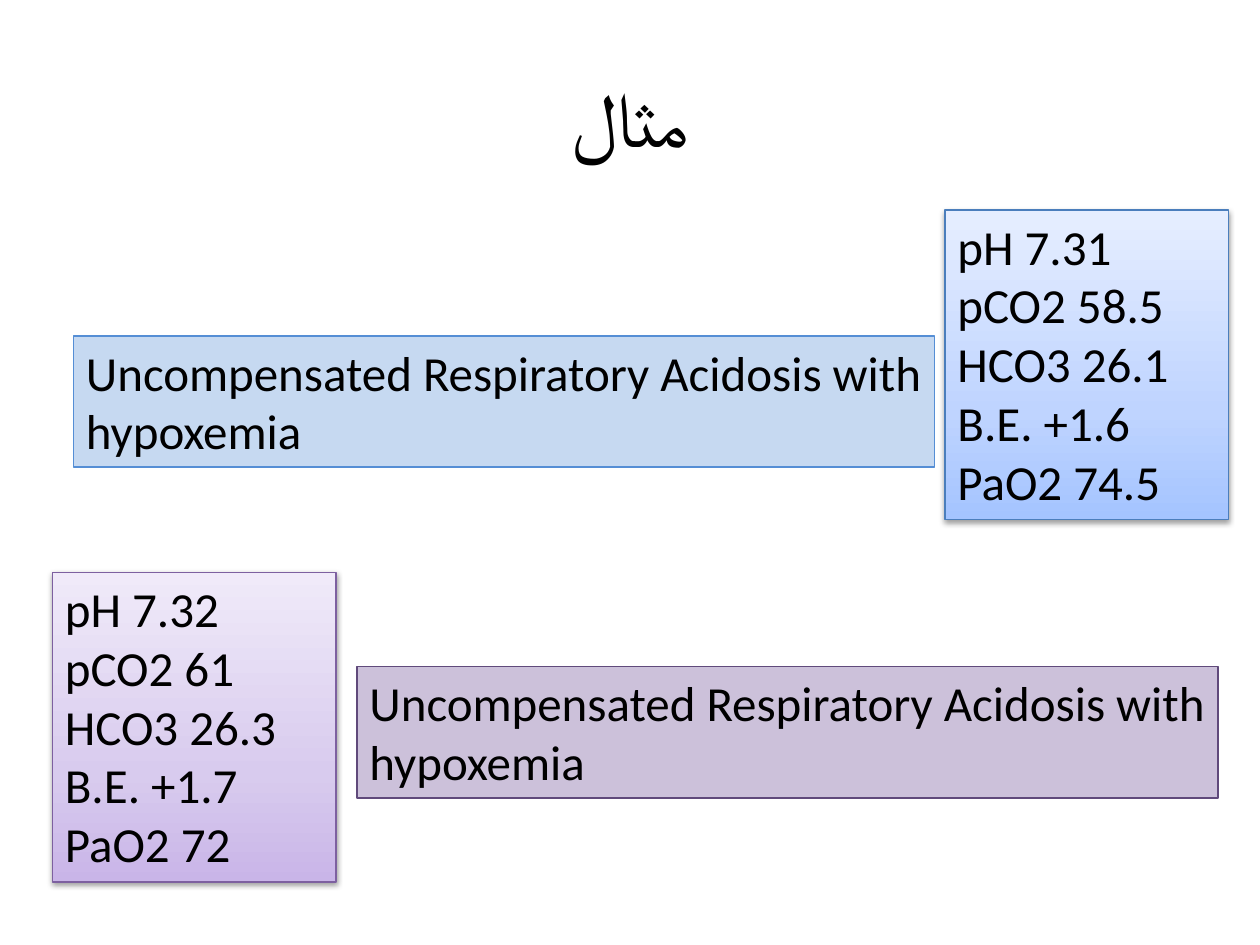
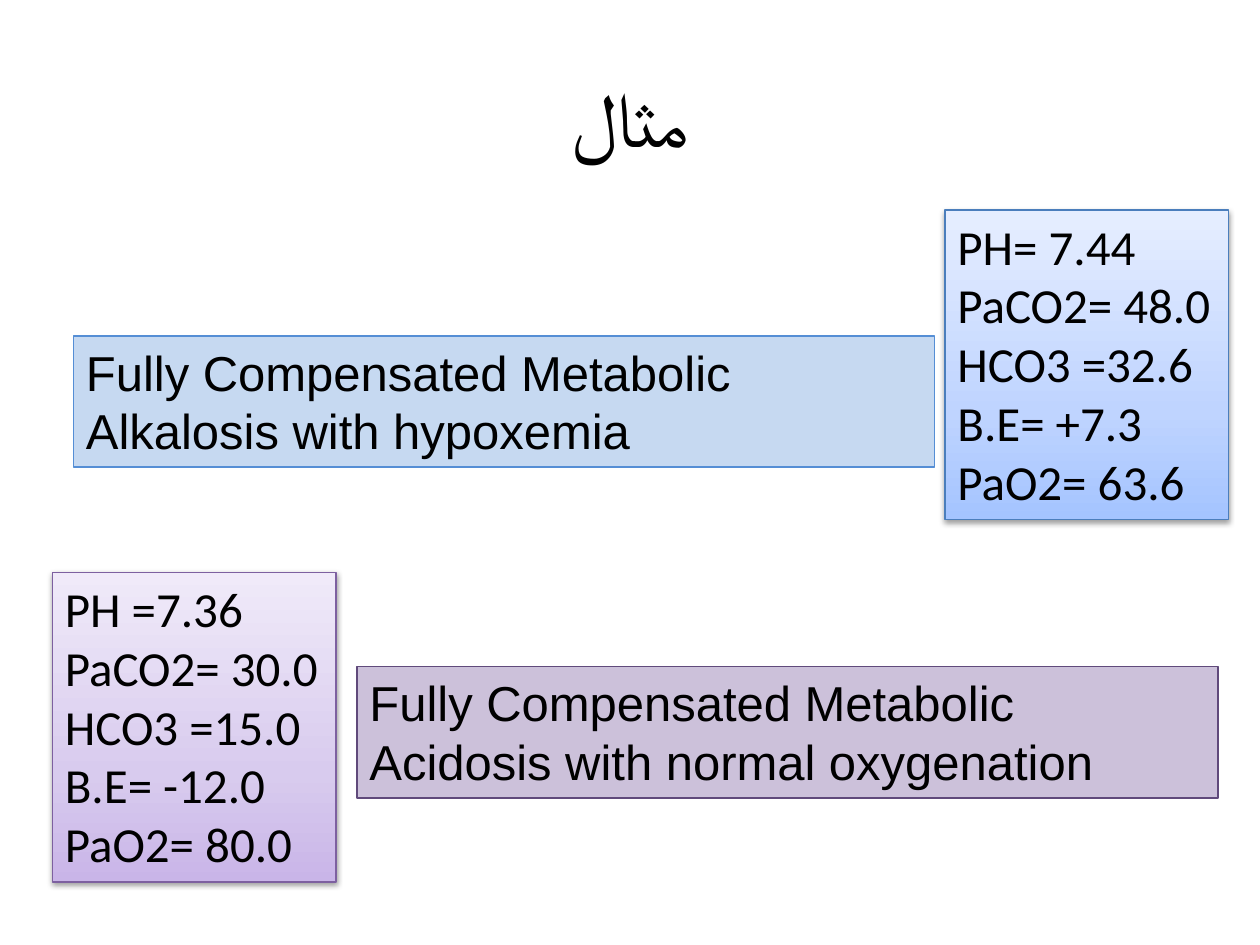
from copy import deepcopy
from dataclasses import dataclass
from typing import Any

from lxml.etree import SubElement
from pptx import Presentation
from pptx.dml.color import RGBColor
from pptx.enum.shapes import MSO_SHAPE
from pptx.enum.text import MSO_ANCHOR, MSO_AUTO_SIZE, PP_ALIGN
from pptx.oxml.ns import qn
from pptx.util import Inches, Pt

SLIDE_WIDTH, SLIDE_HEIGHT = Inches(10), Inches(7.5)
COLUMN, ROW = SLIDE_WIDTH / 120, SLIDE_HEIGHT / 90


@dataclass(frozen=True)
class Palette:
    gradient: tuple[str, str, str]
    values_line: str
    diagnosis_fill: str
    diagnosis_line: str


@dataclass(frozen=True)
class Theme:
    text: str = "000000"
    font: str = "Calibri"
    title_size: float = 44
    body_size: float = 28
    line_width: float = 0.75
    gradient_positions: tuple[float, ...] = (0, 0.35, 1)
    purple: Palette = Palette(("C9B5E8", "D8CBEE", "F0EAF9"), "7D60A0", "CCC1DA", "604A7B")
    blue: Palette = Palette(("A4C4FF", "BFD4FF", "E6EEFF"), "4B7EBC", "C6D9F1", "558ED5")


THEME = Theme()


@dataclass(frozen=True)
class Area:
    column: float
    row: float
    columns: float
    rows: float

    def lengths(self) -> tuple[int, ...]:
        shares = (self.column * COLUMN, self.row * ROW, self.columns * COLUMN, self.rows * ROW)
        return tuple(round(share) for share in shares)


@dataclass(frozen=True)
class CaseStyle:
    values_area: Area
    diagnosis_area: Area
    palette: Palette


@dataclass(frozen=True)
class BloodGasCase:
    values: tuple[str, ...]
    diagnosis: str


@dataclass(frozen=True)
class ExampleSlide:
    diagnosis_font: str
    cases: tuple[BloodGasCase, BloodGasCase]


TITLE = "مثال"
TITLE_AREA = Area(6, 3.6, 108, 15)
CASE_STYLES = (
    CaseStyle(Area(5, 54.5, 27, 29.5), Area(34, 63.5, 82, 12.5), THEME.purple),
    CaseStyle(Area(90, 20, 27, 29.5), Area(7, 32, 82, 12.5), THEME.blue),
)
UNCOMPENSATED = "Uncompensated Respiratory Acidosis with hypoxemia"
EXAMPLES = (
    ExampleSlide("Calibri", (
        BloodGasCase(("pH 7.32", "pCO2 61", "HCO3 26.3", "B.E. +1.7", "PaO2 72"), UNCOMPENSATED),
        BloodGasCase(("pH 7.31", "pCO2 58.5", "HCO3 26.1", "B.E. +1.6", "PaO2 74.5"), UNCOMPENSATED),
    )),
    ExampleSlide("Arial", (
        BloodGasCase(("PH =7.36", "PaCO2= 30.0", "HCO3 =15.0", "B.E= -12.0", "PaO2= 80.0"),
                     "Fully Compensated Metabolic Acidosis with normal oxygenation"),
        BloodGasCase(("PH= 7.44", "PaCO2= 48.0", "HCO3 =32.6", "B.E= +7.3", "PaO2= 63.6"),
                     "Fully Compensated Metabolic Alkalosis with hypoxemia"),
    )),
)


def apply_format(target: Any, values: dict[str, Any]) -> None:
    for name, value in values.items():
        setattr(target, name, value)


def write_text(shape: Any, lines: tuple[str, ...], font: str, size: float,
               alignment: PP_ALIGN, frame_format: dict[str, Any]) -> None:
    frame = shape.text_frame
    apply_format(frame, {"word_wrap": True, **frame_format})
    frame.text = "\n".join(lines)
    for paragraph in frame.paragraphs:
        paragraph.alignment = alignment
        for run in paragraph.runs:
            apply_format(run.font, {"name": font, "size": Pt(size)})
            run.font.color.rgb = RGBColor.from_string(THEME.text)


def draw_title(slide: Any) -> None:
    title = slide.shapes.add_textbox(*TITLE_AREA.lengths())
    write_text(title, (TITLE,), THEME.font, THEME.title_size, PP_ALIGN.CENTER,
               {"vertical_anchor": MSO_ANCHOR.MIDDLE})


def draw_box(slide: Any, area: Area, lines: tuple[str, ...], font: str, line_color: str) -> Any:
    shape = slide.shapes.add_shape(MSO_SHAPE.RECTANGLE, *area.lengths())
    shape.shadow.inherit = False
    shape.line.color.rgb = RGBColor.from_string(line_color)
    shape.line.width = Pt(THEME.line_width)
    write_text(shape, lines, font, THEME.body_size, PP_ALIGN.LEFT,
               {"vertical_anchor": MSO_ANCHOR.TOP, "auto_size": MSO_AUTO_SIZE.SHAPE_TO_FIT_TEXT})
    return shape


def fill_gradient(shape: Any, colors: tuple[str, ...]) -> None:
    shape.fill.gradient()
    shape.fill.gradient_angle = 90
    stop_list = shape.element.spPr.find(".//" + qn("a:gsLst"))
    stop_list.append(deepcopy(stop_list[-1]))
    for stop, color, position in zip(shape.fill.gradient_stops, colors, THEME.gradient_positions):
        stop.color.rgb = RGBColor.from_string(color)
        stop.position = position


def add_soft_shadow(shape: Any) -> None:
    effects = shape.element.spPr.find(qn("a:effectLst"))
    shadow = SubElement(effects, qn("a:outerShdw"), blurRad="40000", dist="20000",
                        dir="5400000", rotWithShape="0")
    color = SubElement(shadow, qn("a:srgbClr"), val="000000")
    SubElement(color, qn("a:alpha"), val="38000")


def draw_case(slide: Any, case: BloodGasCase, style: CaseStyle, diagnosis_font: str) -> None:
    palette = style.palette
    values_box = draw_box(slide, style.values_area, case.values, THEME.font, palette.values_line)
    fill_gradient(values_box, palette.gradient)
    add_soft_shadow(values_box)
    diagnosis_box = draw_box(slide, style.diagnosis_area, (case.diagnosis,), diagnosis_font,
                             palette.diagnosis_line)
    diagnosis_box.fill.solid()
    diagnosis_box.fill.fore_color.rgb = RGBColor.from_string(palette.diagnosis_fill)


def main() -> None:
    presentation = Presentation()
    apply_format(presentation, {"slide_width": SLIDE_WIDTH, "slide_height": SLIDE_HEIGHT})
    for example in EXAMPLES:
        slide = presentation.slides.add_slide(presentation.slide_layouts[6])
        draw_title(slide)
        for case, style in zip(example.cases, CASE_STYLES):
            draw_case(slide, case, style, example.diagnosis_font)
    presentation.save("out.pptx")


if __name__ == "__main__":
    main()
